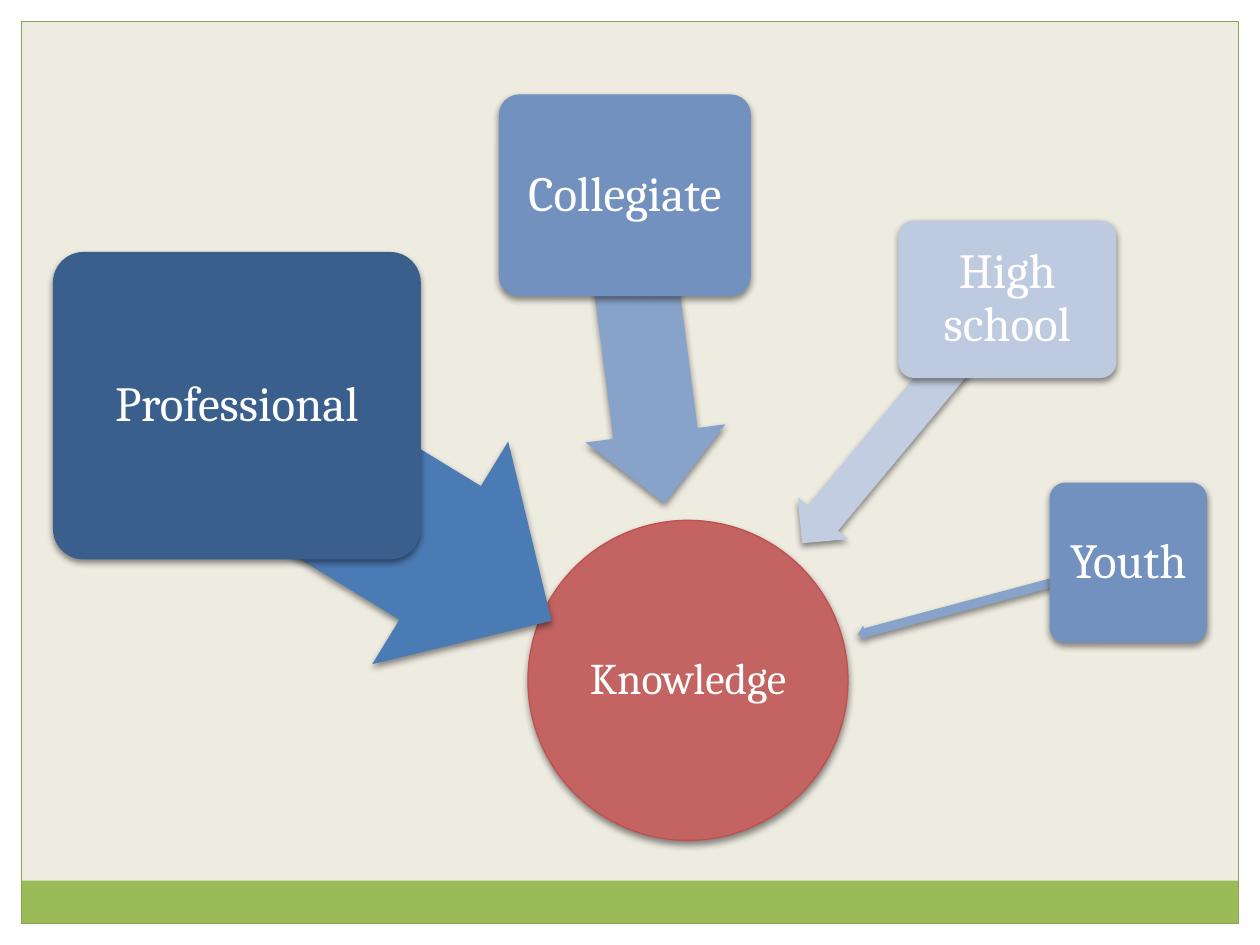
from lxml import etree
from pptx import Presentation
from pptx import util as u
from pptx.dml.color import RGBColor
from pptx.enum import shapes, text
from pptx.oxml import ns

Inches, Pt = u.Inches, u.Pt
Kind = shapes.MSO_SHAPE


def colour(value):
    return RGBColor.from_string(value)


def add_child(parent, tag, **attributes):
    return etree.SubElement(parent, ns.qn(tag), attributes)


def add_block(page, kind, box, fill=None, line=None):
    block = page.shapes.add_shape(kind, *[Inches(length) for length in box])
    block.shadow.inherit = False
    if fill:
        block.fill.solid()
        block.fill.fore_color.rgb = colour(fill)
    else:
        block.fill.background()
    if line:
        block.line.color.rgb = colour(line)
        block.line.width = Pt(0.75)
    else:
        block.line.fill.background()
    return block


def add_shadow(block):
    effects = block._element.spPr.find(ns.qn("a:effectLst"))
    shadow = add_child(effects, "a:outerShdw", blurRad=str(Pt(4)), dist=str(Pt(2)),
                       dir="5400000", rotWithShape="0")
    tint = add_child(shadow, "a:srgbClr", val="000000")
    add_child(tint, "a:alpha", val="45000")


def write_label(block, label, size, inset):
    frame = block.text_frame
    frame.word_wrap = True
    frame.vertical_anchor = text.MSO_ANCHOR.MIDDLE
    frame.margin_left = frame.margin_right = Inches(inset)
    frame.margin_top = frame.margin_bottom = Inches(inset)
    para = frame.paragraphs[0]
    para.alignment = text.PP_ALIGN.CENTER
    para.line_spacing = 0.9
    after = add_child(para._p.get_or_add_pPr(), "a:spcAft")
    add_child(after, "a:spcPct", val="35000")
    span = para.add_run()
    span.text = label
    span.font.size = Pt(size)
    span.font.name = "Cambria"
    span.font.color.rgb = colour("FFFFFF")


def add_frame(page, width, height, margin, band):
    page.background.fill.solid()
    page.background.fill.fore_color.rgb = colour("EEECE1")
    inner_width, inner_height = width - 2 * margin, height - 2 * margin
    edges = [
        (0, height - margin, width, margin),
        (0, 0, width, margin),
        (width - margin, 0, margin, height),
        (0, 0, margin, height),
    ]
    for edge in edges:
        add_block(page, Kind.RECTANGLE, edge, "FFFFFF")
    add_block(page, Kind.RECTANGLE,
              (margin, height - margin - band, inner_width, band), "9BBB59")
    add_block(page, Kind.RECTANGLE,
              (margin, margin, inner_width, inner_height), line="89A54F")


def add_hub(page, box, label):
    hub = add_block(page, Kind.OVAL, box, "C46462", "C0504D")
    add_shadow(hub)
    write_label(hub, label, 25, 0.02)


def add_source(page, label, box, fill, arrow_box, angle, arrow_fill):
    arrow = add_block(page, Kind.LEFT_ARROW, arrow_box, arrow_fill)
    arrow.adjustments[0] = 0.6
    arrow.adjustments[1] = 0.5
    arrow.rotation = angle
    add_shadow(arrow)
    card = add_block(page, Kind.ROUNDED_RECTANGLE, box, fill)
    card.adjustments[0] = 0.1
    add_shadow(card)
    write_label(card, label, 28, 0.06)


SOURCES = [
    ("Professional", (0.42, 2, 2.92, 2.44), "3A5F8C",
     (1.81, 3.17, 2.77, 2.07), 211.4, "4B7BB5"),
    ("Collegiate", (3.96, 0.75, 2, 1.6), "7391BF",
     (3.88, 2.21, 2.47, 1.12), 262.6, "88A3CA"),
    ("High school", (7.13, 1.75, 1.73, 1.25), "BECADF",
     (5.91, 3.08, 2.53, 0.52), 309.8, "C2CDE1"),
    ("Youth", (8.33, 3.83, 1.25, 1.27), "7391BF",
     (6.77, 4.69, 2.22, 0.12), 345, "88A3CA"),
]


def main():
    deck = Presentation()
    deck.slide_width, deck.slide_height = Inches(10), Inches(7.5)
    page = deck.slides.add_slide(deck.slide_layouts[6])
    add_frame(page, 10, 7.5, 0.17, 0.34)
    add_hub(page, (4.19, 4.13, 2.54, 2.54), "Knowledge")
    for source in SOURCES:
        add_source(page, *source)
    deck.save("out.pptx")


if __name__ == "__main__":
    main()
